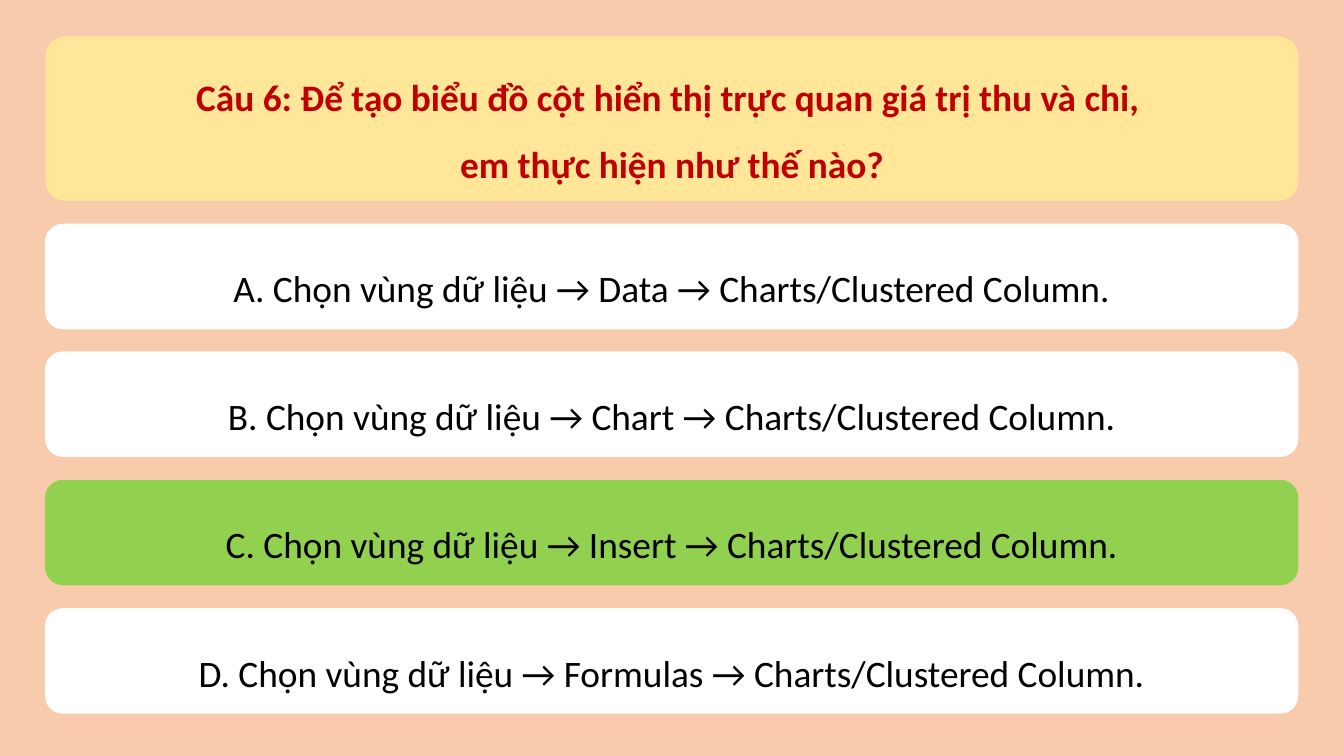
"""Builds a quiz slide with one question and four answers, the correct one in green."""
import pptx
import pptx.dml.color
import pptx.enum.shapes
import pptx.enum.text
import pptx.util

PX = 9144


def rgb(value):
    return pptx.dml.color.RGBColor.from_string(value)


def add_panel(slide, left, top, width, height, rounding, fill, lines, color, bold):
    panel = slide.shapes.add_shape(
        pptx.enum.shapes.MSO_SHAPE.ROUNDED_RECTANGLE,
        left * PX, top * PX, width * PX, height * PX)
    panel.adjustments[0] = rounding
    panel.shadow.inherit = False
    panel.fill.solid()
    panel.fill.fore_color.rgb = rgb(fill)
    panel.line.fill.background()
    panel.text_frame.word_wrap = True
    panel.text_frame.vertical_anchor = pptx.enum.text.MSO_ANCHOR.MIDDLE
    panel.text_frame.text = "\n".join(lines)
    for paragraph in panel.text_frame.paragraphs:
        paragraph.alignment = pptx.enum.text.PP_ALIGN.CENTER
        paragraph.line_spacing = 1.5
        for run in paragraph.runs:
            run.font.name = "Calibri"
            run.font.size = pptx.util.Pt(40)
            run.font.bold = bold
            run.font.color.rgb = rgb(color)


deck = pptx.Presentation()
deck.slide_width = 2000 * PX
deck.slide_height = 1125 * PX
quiz = deck.slides.add_slide(deck.slide_layouts[6])
quiz.background.fill.solid()
quiz.background.fill.fore_color.rgb = rgb("F8CBAD")

question = [
    "Câu 6: Để tạo biểu đồ cột hiển thị trực quan giá trị thu và chi, ",
    "em thực hiện như thế nào?",
]
add_panel(quiz, 68, 54, 1864, 245, 0.12, "FFE699", question, "C00000", True)

menus = {"A": "Data", "B": "Chart", "C": "Insert", "D": "Formulas"}
correct = "C"
first_top, last_top = 333, 905
for index, (letter, menu) in enumerate(menus.items()):
    top = first_top + (last_top - first_top) * index // (len(menus) - 1)
    answer = f"{letter}. Chọn vùng dữ liệu → {menu} → Charts/Clustered Column."
    fill = "92D050" if letter == correct else "FFFFFF"
    add_panel(quiz, 67, top, 1865, 157, 0.17, fill, [answer], "000000", False)

deck.save("out.pptx")
